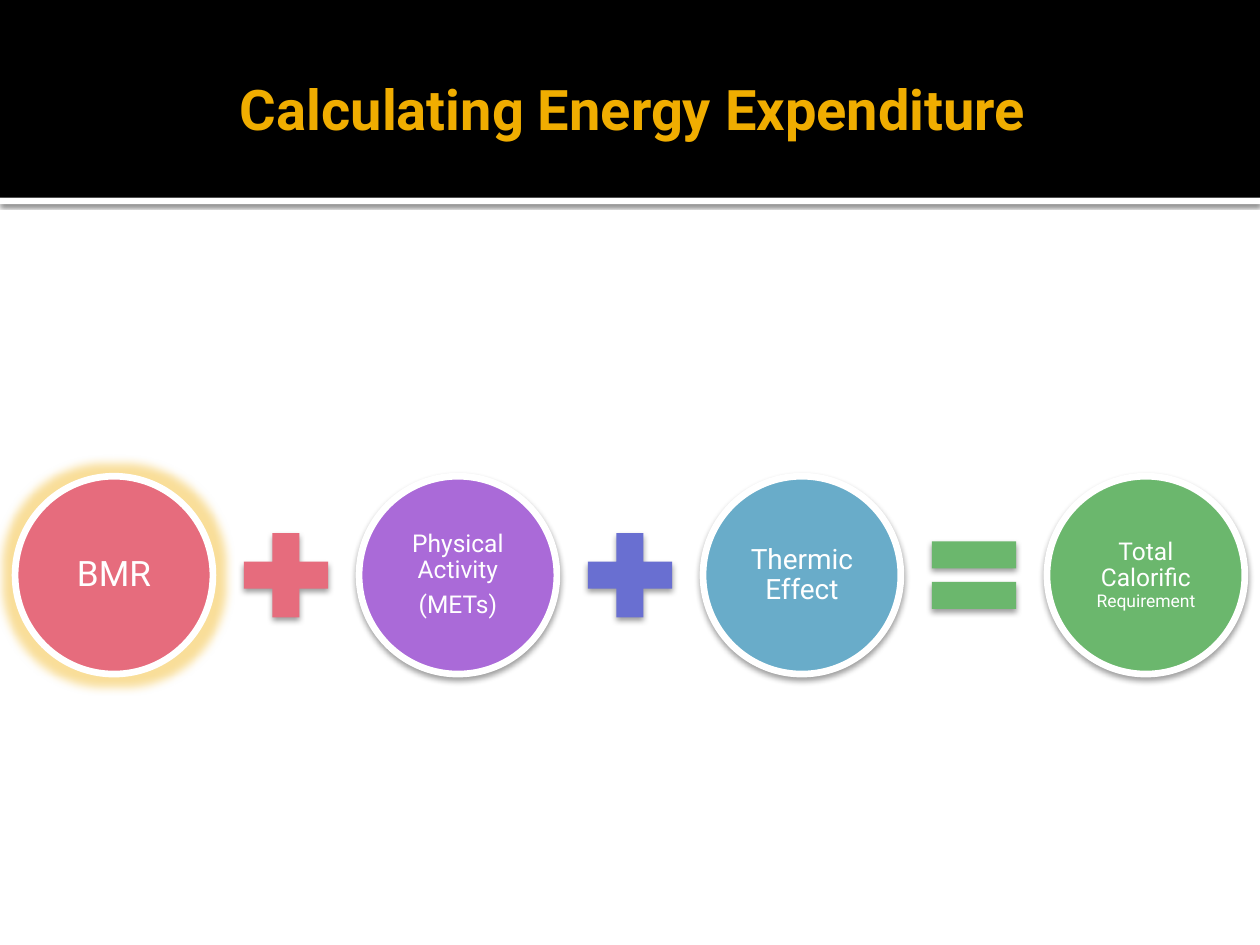
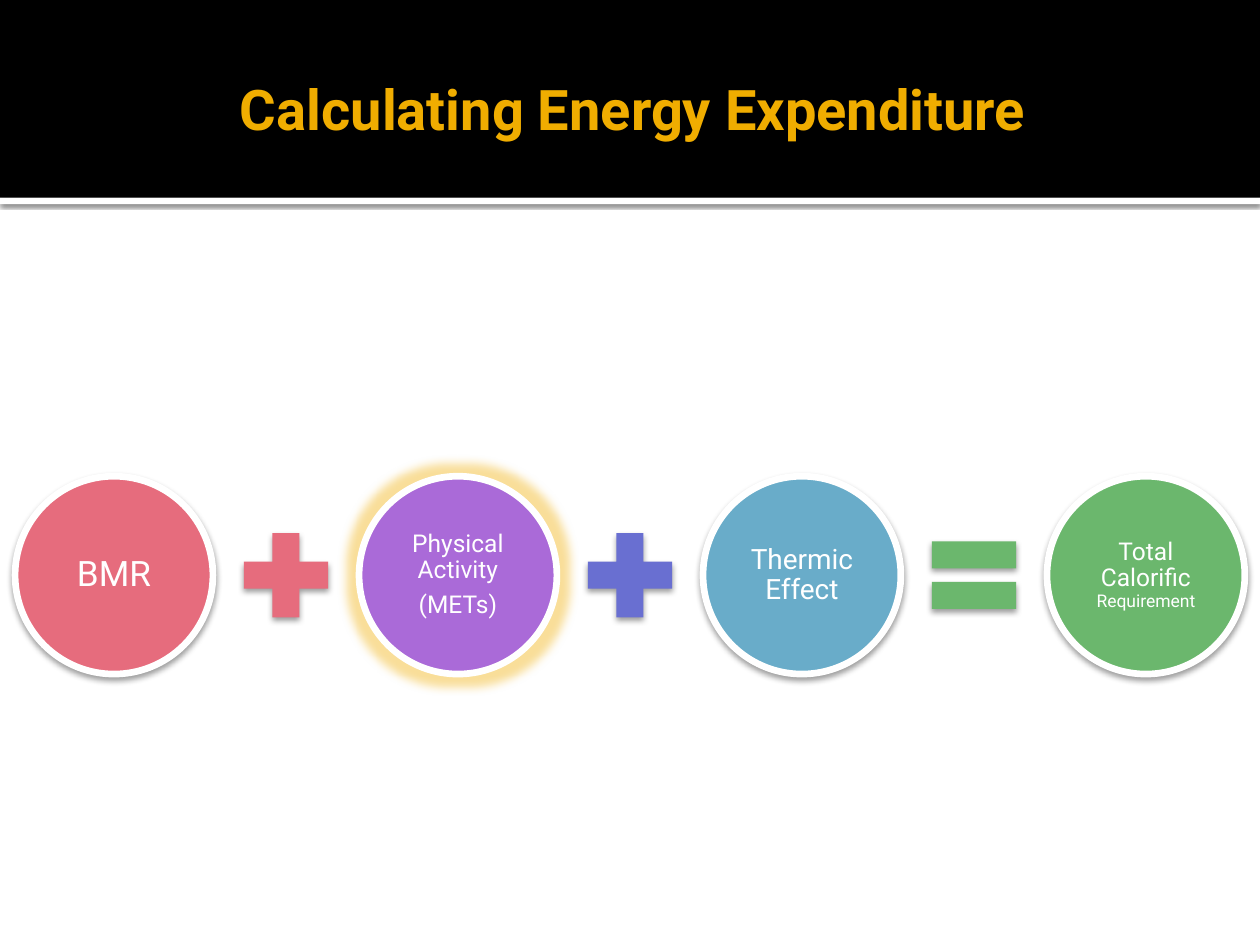
from lxml import etree
from pptx import Presentation
from pptx import util as u
from pptx.dml.color import RGBColor
from pptx.enum import shapes, text
from pptx.oxml.ns import qn

HUES = dict(black="000000", white="FFFFFF", gold="F0AD00", rose="E66C7D",
            violet="AA6AD8", indigo="696FD1", blue="69ACC9", green="6BB76D")
FONT = "Roboto"
TITLE = "Calculating Energy Expenditure"

# Each term: hue, inset, paragraphs made of (words, size) runs
TERMS = [
    ("rose", 0.03, [[("BMR", 20)]]),
    ("violet", 0.02, [[("Physical Activity", 14)], [("(METs)", 14)]]),
    ("blue", 0.02, [[("Thermic Effect", 16)]]),
    ("green", 0.02, [[("Total Calorific ", 14), ("Requirement", 10)]]),
]
KIND = shapes.MSO_SHAPE
SIGNS = [(KIND.MATH_PLUS, "rose"), (KIND.MATH_PLUS, "indigo"),
         (KIND.MATH_EQUAL, "green")]
GLOWS = [0, 1]  # the term that glows on each slide

WIDE, HIGH = 10, 7.5
BAND, RULE = 1.57, 0.05
DISC, SIGN, EDGE = 1.57, 0.91, 0.12
STEP = (WIDE - 2 * EDGE - DISC) / (len(TERMS) - 1)
MID = 4.565

SOFT = dict(blurRad=u.Pt(3.5), dist=u.Pt(2), dir=90 * 60000)
THIN = dict(blurRad=u.Pt(2.5), dist=u.Pt(0.8), dir=90 * 60000)
HALO = dict(rad=u.Pt(11))


def paint(hue):
    return RGBColor.from_string(HUES[hue])


def effect(shape, kind, hue, alpha, sizes):
    """Give the shape one effect: outerShdw or glow."""
    node = etree.SubElement(shape.element.spPr.find(qn("a:effectLst")),
                            qn("a:" + kind))
    for key, val in sizes.items():
        node.set(key, str(int(val)))
    if kind == "outerShdw":
        node.set("rotWithShape", "0")
    tint = etree.SubElement(node, qn("a:srgbClr"), val=HUES[hue])
    etree.SubElement(tint, qn("a:alpha"), val=str(alpha * 1000))


def draw(slide, kind, box, hue):
    shape = slide.shapes.add_shape(kind, *map(u.Inches, box))
    shape.fill.solid()
    shape.fill.fore_color.rgb = paint(hue)
    shape.line.fill.background()
    shape.shadow.inherit = False
    return shape


def inset(frame, *sides):
    (frame.margin_left, frame.margin_top,
     frame.margin_right, frame.margin_bottom) = map(u.Inches, sides)
    frame.word_wrap = True
    frame.vertical_anchor = text.MSO_ANCHOR.MIDDLE


def style(run, size, hue):
    run.font.size = u.Pt(size)
    run.font.name = FONT
    run.font.color.rgb = paint(hue)


def header(slide, layout):
    """Draw the bands once and hand them to the layout."""
    rule = draw(slide, KIND.RECTANGLE, (0, BAND, WIDE, RULE), "white")
    effect(rule, "outerShdw", "black", 60, THIN)
    band = draw(slide, KIND.RECTANGLE, (0, 0, WIDE, BAND), "black")
    for shape in (band, rule):
        layout.shapes.element.insert(2, shape.element)


def head(slide):
    title = slide.shapes.title
    title.left, title.top, title.width, title.height = map(
        u.Inches, (0.5, 0.17, WIDE - 1, 1.37))
    frame = title.text_frame
    frame.text = TITLE
    frame.auto_size = text.MSO_AUTO_SIZE.NONE
    inset(frame, 0.1, 0.05, 0.05, 0.05)
    para = frame.paragraphs[0]
    para.alignment = text.PP_ALIGN.CENTER
    style(para.runs[0], 32, "gold")
    para.runs[0].font.bold = True


def term(slide, col, glow):
    hue, pad, paras = TERMS[col]
    disc = draw(slide, KIND.OVAL,
                (EDGE + col * STEP, MID - DISC / 2, DISC, DISC), hue)
    disc.line.color.rgb = paint("white")
    disc.line.width = u.Pt(3.82)
    if glow:
        effect(disc, "glow", "gold", 40, HALO)
    else:
        effect(disc, "outerShdw", "black", 38, SOFT)
    frame = disc.text_frame
    inset(frame, pad, pad, pad, pad)
    for row, runs in enumerate(paras):
        para = frame.add_paragraph() if row else frame.paragraphs[0]
        para.alignment = text.PP_ALIGN.CENTER
        para.line_spacing = 0.9
        para.space_after = u.Pt(0.35 * runs[0][1])
        for words, size in runs:
            run = para.add_run()
            run.text = words
            style(run, size, "white")


def sign(slide, col):
    kind, hue = SIGNS[col]
    left = EDGE + col * STEP + (DISC + STEP - SIGN) / 2
    mark = draw(slide, kind, (left, MID - SIGN / 2, SIGN, SIGN), hue)
    effect(mark, "outerShdw", "black", 38, SOFT)


def main():
    deck = Presentation()
    deck.slide_width, deck.slide_height = u.Inches(WIDE), u.Inches(HIGH)
    layout = deck.slide_layouts[5]
    for page, lit in enumerate(GLOWS):
        slide = deck.slides.add_slide(layout)
        if page == 0:
            header(slide, layout)
        head(slide)
        for col in range(len(TERMS)):
            term(slide, col, col == lit)
            if col < len(SIGNS):
                sign(slide, col)
    deck.save("out.pptx")


if __name__ == "__main__":
    main()
